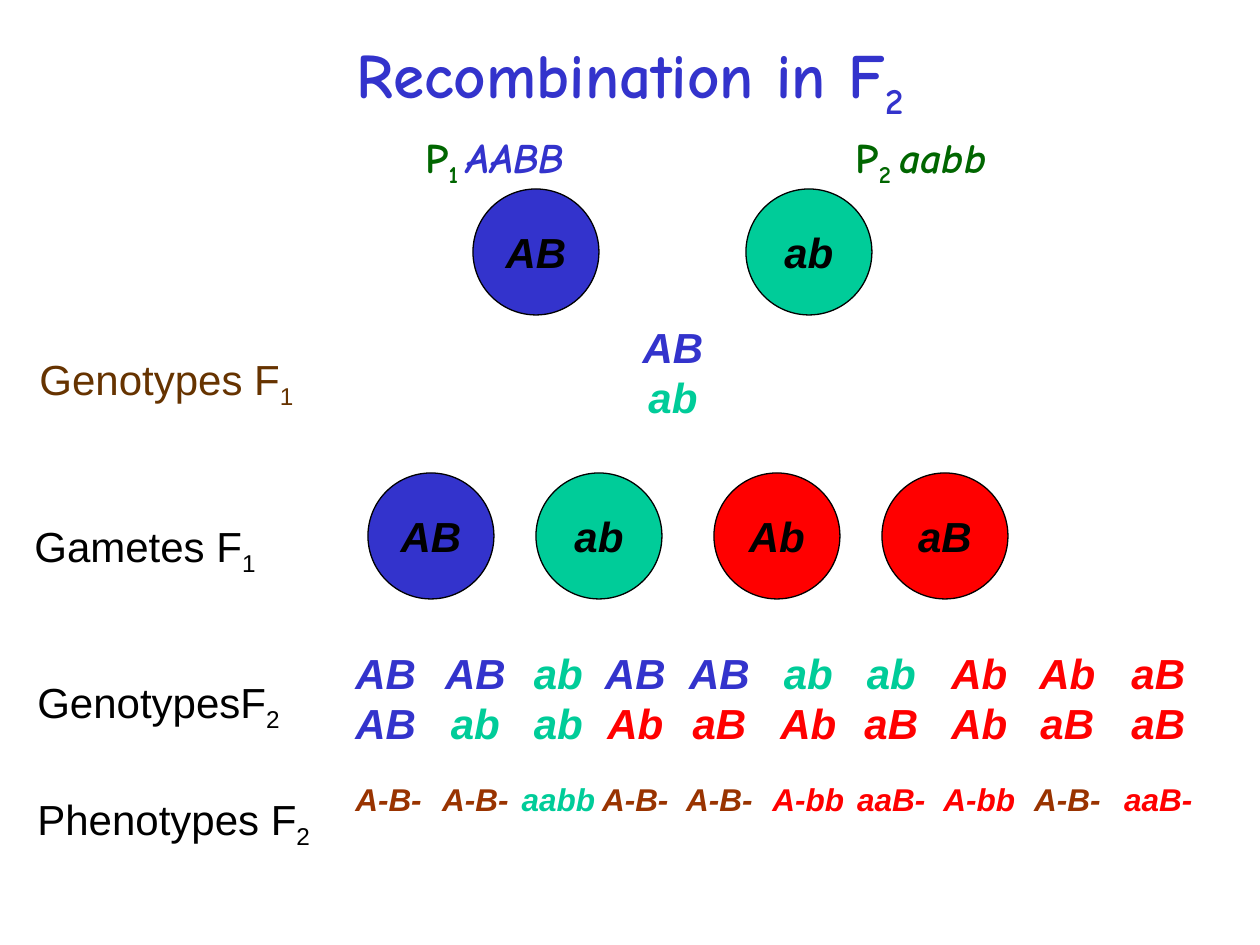
from lxml.etree import SubElement
from pptx import Presentation
from pptx.dml.color import RGBColor
from pptx.enum.shapes import MSO_SHAPE
from pptx.enum.text import MSO_ANCHOR, PP_ALIGN
from pptx.oxml.ns import qn
from pptx.util import Emu, Pt

PX_PER_INCH = 126
COLOURS = {
    "blue": "3333CC", "green": "00CC99", "red": "FF0000", "black": "000000",
    "leaf": "006600", "bark": "663300", "rust": "993300",
}
ALLELE_COLOURS = {
    "AB": "blue", "ab": "green", "Ab": "red", "aB": "red",
    "A-B-": "rust", "aabb": "green", "A-bb": "red", "aaB-": "red",
}
F2_GENOTYPES = [
    ("AB", "AB"), ("AB", "ab"), ("ab", "ab"), ("AB", "Ab"), ("AB", "aB"),
    ("ab", "Ab"), ("ab", "aB"), ("Ab", "Ab"), ("Ab", "aB"), ("aB", "aB"),
]
F2_PHENOTYPES = ["A-B-", "A-B-", "aabb", "A-B-", "A-B-",
                 "A-bb", "aaB-", "A-bb", "A-B-", "aaB-"]
F2_COLUMN_CENTRES = [120, 203, 280, 364, 453, 536, 624, 712, 803]


def px(length):
    """Turn pixels into EMU."""
    return Emu(round(length * 914400 / PX_PER_INCH))


def add_run(paragraph, text, colour, size=24, font="Arial",
            bold=False, italic=False, subscript=False):
    """Append one formatted run to a paragraph."""
    run = paragraph.add_run()
    run.text = text
    run.font.size = Pt(size)
    run.font.name = font
    run.font.bold = bold
    run.font.italic = italic
    run.font.color.rgb = RGBColor.from_string(COLOURS[colour])
    if subscript:
        run.font._element.set("baseline", "-25000")


def add_tabs(paragraph, stops, align):
    """Give a paragraph tab stops at the given pixel offsets."""
    tabs = SubElement(paragraph._p.get_or_add_pPr(), qn("a:tabLst"))
    for stop in stops:
        SubElement(tabs, qn("a:tab"), pos=str(px(stop)), algn=align)


def add_frame(slide, box, wrap=False):
    """Add a text box and return its text frame."""
    frame = slide.shapes.add_textbox(*map(px, box)).text_frame
    frame.word_wrap = wrap
    return frame


def add_generation(paragraph, name, number, colour):
    """Write a row name with its generation as a subscript."""
    add_run(paragraph, name, colour)
    add_run(paragraph, number, colour, subscript=True)


def add_title(slide, box):
    """Place and format the slide title."""
    title = slide.shapes.title
    title.left, title.top, title.width, title.height = map(px, box)
    title.text_frame.vertical_anchor = MSO_ANCHOR.MIDDLE
    heading = title.text_frame.paragraphs[0]
    heading.alignment = PP_ALIGN.CENTER
    style = {"size": 36, "font": "Comic Neue", "bold": True}
    add_run(heading, "Recombination in F", "blue", **style)
    add_run(heading, "2", "blue", subscript=True, **style)


def add_parents(slide, box):
    """Write the genotypes of both parents on one line."""
    parents = add_frame(slide, box, wrap=True).paragraphs[0]
    parents.line_spacing = 0.9
    parents.space_before = Pt(5)
    parents._p.get_or_add_pPr().set("marL", str(px(350)))
    add_tabs(parents, [644], "l")
    style = {"font": "Comic Neue", "bold": True}
    for lead, number, genotype, colour in [("P", "1 ", "AABB", "blue"),
                                           ("\tP", "2 ", "aabb", "leaf")]:
        add_run(parents, lead, "leaf", **style)
        add_run(parents, number, "leaf", subscript=True, **style)
        add_run(parents, genotype, colour, italic=True, **style)


def add_gametes(slide, lefts, top, alleles, diameter=126):
    """Draw a row of gametes as labelled circles."""
    for left, allele in zip(lefts, alleles):
        gamete = slide.shapes.add_shape(
            MSO_SHAPE.OVAL, *map(px, (left, top, diameter, diameter)))
        gamete.shadow.inherit = False
        gamete.fill.solid()
        gamete.fill.fore_color.rgb = RGBColor.from_string(
            COLOURS[ALLELE_COLOURS[allele]])
        gamete.line.color.rgb = RGBColor.from_string(COLOURS["black"])
        gamete.line.width = Pt(0.75)
        gamete.text_frame.word_wrap = False
        gamete.text_frame.vertical_anchor = MSO_ANCHOR.MIDDLE
        label = gamete.text_frame.paragraphs[0]
        label.alignment = PP_ALIGN.CENTER
        add_run(label, allele, "black", bold=True, italic=True)


def add_f1_label(slide, box, name, colour):
    """Write the name of an F1 row."""
    label = add_frame(slide, box).paragraphs[0]
    label.alignment = PP_ALIGN.CENTER
    add_generation(label, name, "1", colour)


def add_f1_genotype(slide, box):
    """Stack the two allele pairs of the F1."""
    frame = add_frame(slide, box)
    for pair in (frame.paragraphs[0], frame.add_paragraph()):
        pair.alignment = PP_ALIGN.CENTER
    for pair, allele in zip(frame.paragraphs, ("AB", "ab")):
        add_run(pair, allele, ALLELE_COLOURS[allele], bold=True, italic=True)


def add_f2_labels(slide, box):
    """Write the names of the F2 rows."""
    frame = add_frame(slide, box)
    add_generation(frame.paragraphs[0], "GenotypesF", "2", "black")
    phenotypes = frame.add_paragraph()
    phenotypes.space_before = Pt(34)
    add_generation(phenotypes, "Phenotypes F", "2", "black")


def add_f2_rows(slide, box):
    """Line up F2 genotypes and phenotypes in tabbed columns."""
    frame = add_frame(slide, box, wrap=True)
    upper, lower = zip(*F2_GENOTYPES)
    rows = [(upper, 24, 0), (lower, 24, 0), (F2_PHENOTYPES, 18, 18)]
    for index, (entries, size, gap) in enumerate(rows):
        row = frame.add_paragraph() if index else frame.paragraphs[0]
        row.space_before = Pt(gap)
        add_tabs(row, F2_COLUMN_CENTRES, "ctr")
        for column, entry in enumerate(entries):
            add_run(row, "\t" + entry if column else entry,
                    ALLELE_COLOURS[entry], size, bold=True, italic=True)


def main():
    """Build the slide and save it."""
    deck = Presentation()
    deck.slide_width, deck.slide_height = px(1260), px(945)
    slide = deck.slides.add_slide(deck.slide_layouts[5])
    add_title(slide, (84, 32, 1092, 94))
    add_parents(slide, (63, 126, 1155, 53))
    add_gametes(slide, (473, 746), 189, ("AB", "ab"))
    add_f1_label(slide, (21, 347, 291, 63), "Genotypes F", "bark")
    add_f1_genotype(slide, (630, 315, 86, 113))
    add_f1_label(slide, (21, 514, 248, 63), "Gametes F", "black")
    add_gametes(slide, (368, 536, 714, 882), 473, ("AB", "ab", "Ab", "aB"))
    add_f2_labels(slide, (25, 670, 300, 147))
    add_f2_rows(slide, (343, 641, 892, 184))
    deck.save("out.pptx")


if __name__ == "__main__":
    main()
